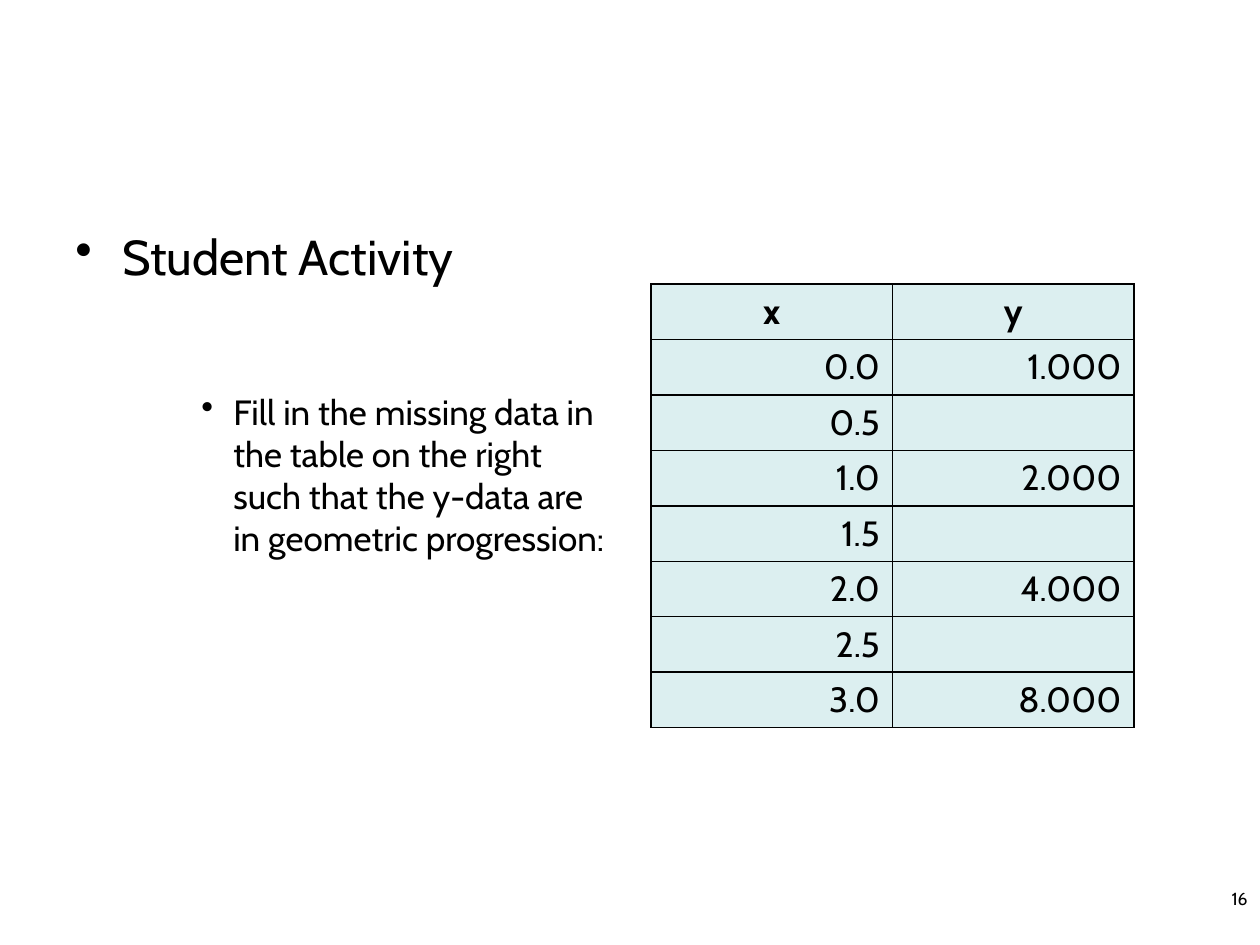
from pptx import Presentation
from pptx.dml.color import RGBColor
from pptx.enum.text import MSO_ANCHOR, PP_ALIGN
from pptx.oxml import parse_xml
from pptx.oxml.ns import nsdecls, qn
from pptx.oxml.xmlchemy import OxmlElement
from pptx.util import Emu, Pt

PX = 914400 // 126
FONT = "Cabin"
COLORS = {"text": "000000", "border": "000000", "cell": "BBE0E3"}

# Content
PAGE_NUMBER = "16"
BULLETS = [
    dict(text="Student Activity", size=28, margin=47, hanging=47),
    dict(text="Fill in the missing data in the table on the right such that "
              "the y-data are in geometric progression:",
         size=20, margin=158, hanging=32, level=2, before=60),
]
HEADERS = ("x", "y")
DATA = [("0.0", "1.000"), ("0.5", ""), ("1.0", "2.000"), ("1.5", ""),
        ("2.0", "4.000"), ("2.5", ""), ("3.0", "8.000")]

# Places in px: left, top, width, height
NUMBER_BOX = (1187, 882, 73, 34)
BODY_BOX = (63, 220, 557, 624)
TABLE_BOX = (651, 284, 483, 444)


def px(*lengths):
    return [Emu(length * PX) for length in lengths]


def write(paragraph, text, size=20, bold=False, align=PP_ALIGN.LEFT,
          margin=0, hanging=0, level=0, before=0):
    paragraph.alignment = align
    paragraph.level = level
    paragraph.space_before = Pt(before)
    if hanging:
        properties = paragraph._p.get_or_add_pPr()
        properties.set("marL", str(margin * PX))
        properties.set("indent", str(-hanging * PX))
        bullet = OxmlElement("a:buChar")
        bullet.set("char", "•")
        properties.append(bullet)
    run = paragraph.add_run()
    run.text = text
    run.font.name = FONT
    run.font.size = Pt(size)
    run.font.bold = bold
    run.font.color.rgb = RGBColor.from_string(COLORS["text"])


def add_text_box(slide, box):
    frame = slide.shapes.add_textbox(*px(*box)).text_frame
    frame.word_wrap = True
    return frame


def style_cell(cell):
    cell.vertical_anchor = MSO_ANCHOR.BOTTOM
    cell.fill.solid()
    cell.fill.fore_color.rgb = RGBColor.from_string(COLORS["cell"])
    properties = cell._tc.get_or_add_tcPr()
    # Half-transparent fill
    alpha = OxmlElement("a:alpha")
    alpha.set("val", "50000")
    properties.find(qn("a:solidFill"))[0].append(alpha)
    # Borders come before the fill
    for index, side in enumerate("LRTB"):
        properties.insert(index, parse_xml(
            f'<a:ln{side} {nsdecls("a")} w="{Pt(1)}"><a:solidFill>'
            f'<a:srgbClr val="{COLORS["border"]}"/></a:solidFill></a:ln{side}>'))


def add_data_table(slide):
    rows = [HEADERS, *DATA]
    table = slide.shapes.add_table(len(rows), len(HEADERS), *px(*TABLE_BOX)).table
    for row_index, values in enumerate(rows):
        is_header = row_index == 0
        for column_index, value in enumerate(values):
            cell = table.cell(row_index, column_index)
            style_cell(cell)
            if value:
                write(cell.text_frame.paragraphs[0], value, bold=is_header,
                      align=PP_ALIGN.CENTER if is_header else PP_ALIGN.RIGHT)


def main():
    presentation = Presentation()
    presentation.slide_width, presentation.slide_height = px(1260, 945)
    slide = presentation.slides.add_slide(presentation.slide_layouts[6])

    # Page number
    write(add_text_box(slide, NUMBER_BOX).paragraphs[0], PAGE_NUMBER,
          size=10, align=PP_ALIGN.RIGHT)

    # Bulleted task
    body = add_text_box(slide, BODY_BOX)
    for index, bullet in enumerate(BULLETS):
        write(body.add_paragraph() if index else body.paragraphs[0], **bullet)

    add_data_table(slide)
    presentation.save("out.pptx")


if __name__ == "__main__":
    main()
